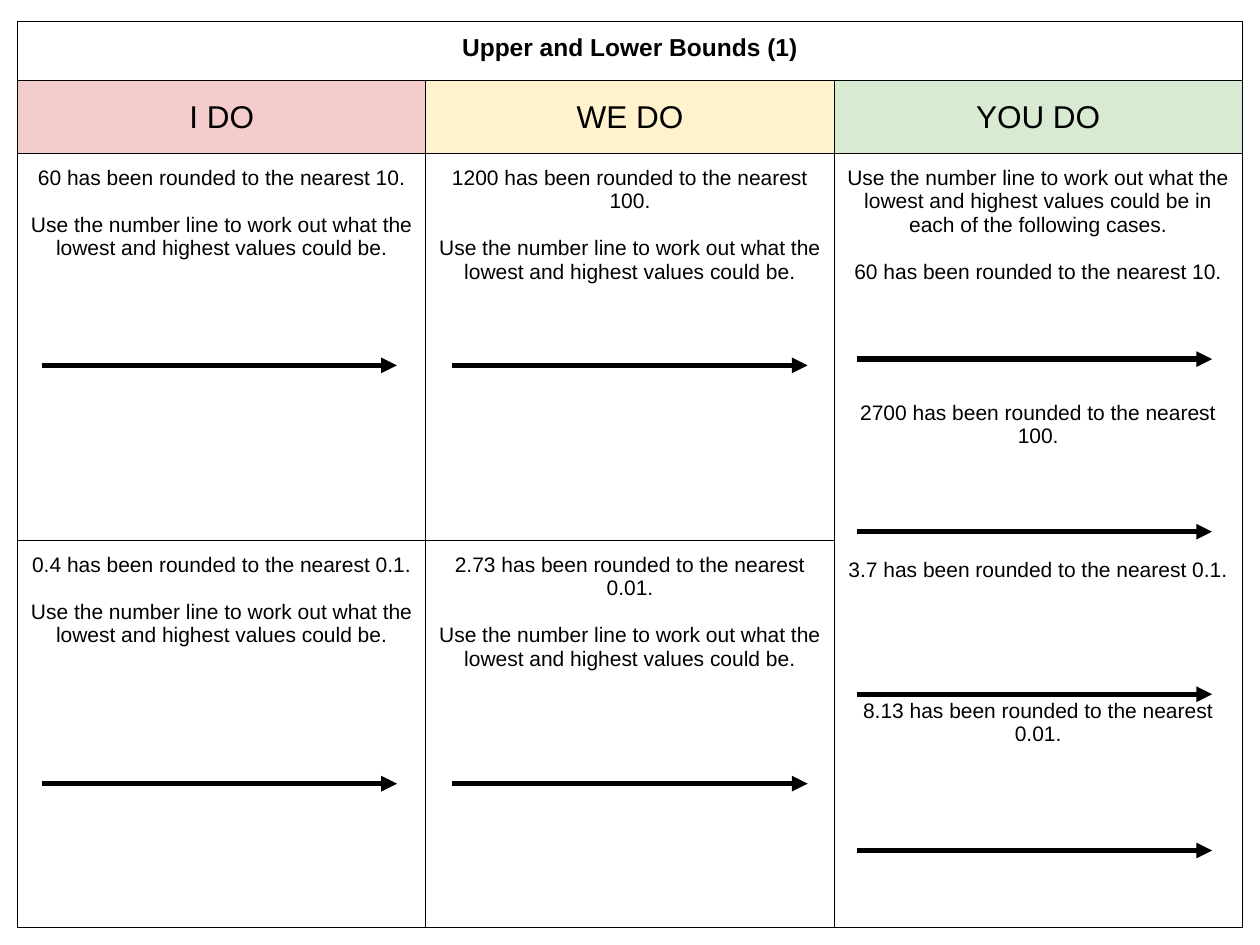
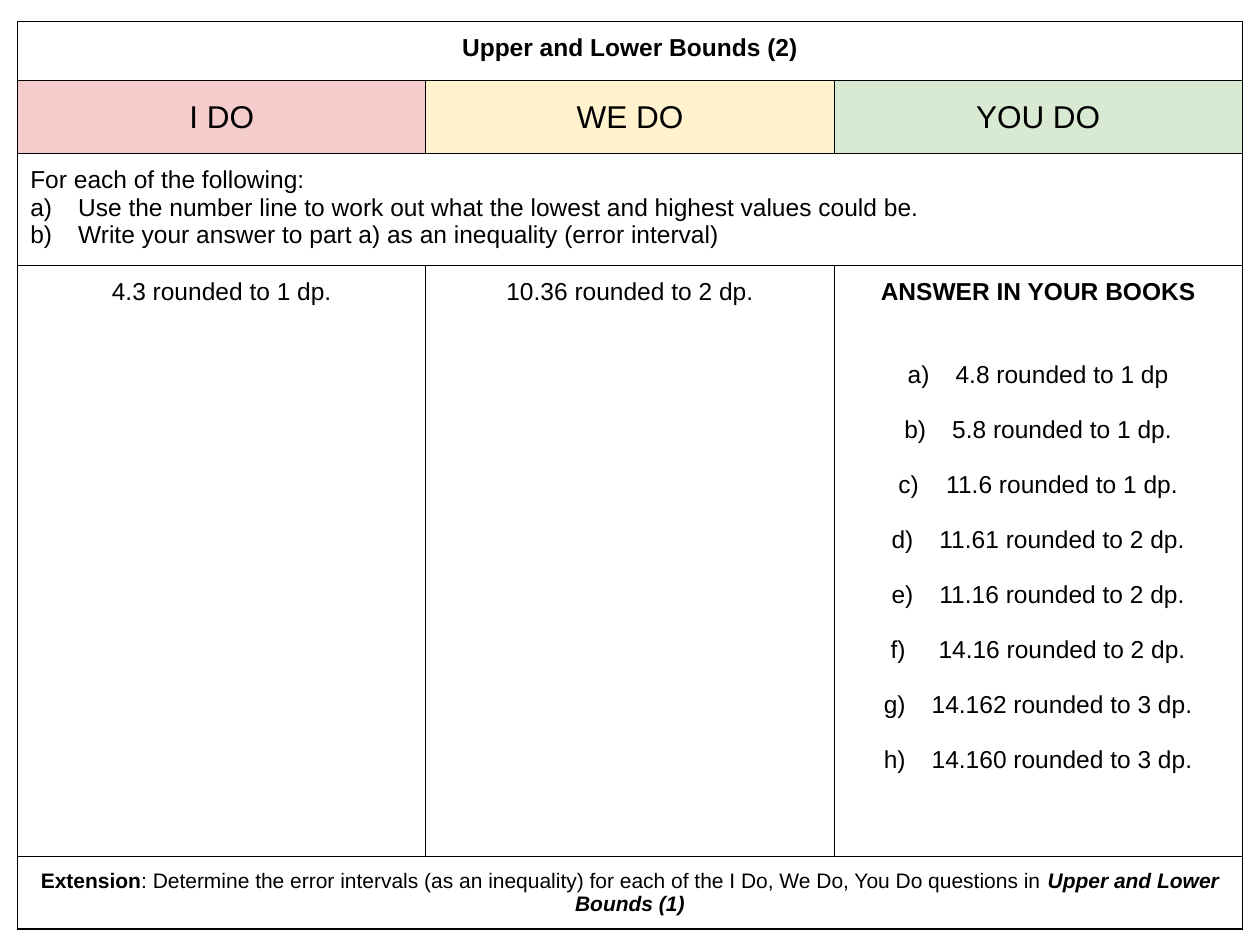
from lxml import etree
from pptx import Presentation
from pptx import util as u
from pptx.dml.color import RGBColor
from pptx.enum import shapes, text
from pptx.oxml import ns

FONT = "Arial"
BLACK = "000000"
HEADERS = [("I DO", "F4CCCC"), ("WE DO", "FFF2CC"), ("YOU DO", "D9EAD3")]
LEFT, TOP = 0.14, 0.17
COLUMN_WIDTH = 3.24
TITLE_HEIGHT, HEADER_HEIGHT = 0.47, 0.58
MARGIN, INDENT = 0.1, 0.38
ARROW_LENGTH = 2.82

TASK = "Use the number line to work out what the lowest and highest values could be"
LINE_12, LINE_14 = 13.4, 15.7  # height of one text line in points


def rounded(value, unit):
    return f"{value} has been rounded to the nearest {unit}."


def example(value, unit):
    return [dict(runs=rounded(value, unit)), dict(runs=TASK + ".", before=LINE_12)]


# Cells: (row, column, last row, last column, text size, paragraphs)
BOUNDS_1 = dict(
    title="Upper and Lower Bounds (1)",
    rows=[3.07, 3.07],
    cells=[
        (2, 0, 2, 0, 12, example("60", "10")),
        (2, 1, 2, 1, 12, example("1200", "100")),
        (2, 2, 3, 2, 12, [
            dict(runs=TASK + " in each of the following cases."),
            dict(runs=rounded("60", "10"), before=LINE_12),
            dict(runs=rounded("2700", "100"), before=5 * LINE_12),
            dict(runs=rounded("3.7", "0.1"), before=63),
            dict(runs=rounded("8.13", "0.01"), before=5 * LINE_12),
        ]),
        (3, 0, 3, 0, 12, example("0.4", "0.1")),
        (3, 1, 3, 1, 12, example("2.73", "0.01")),
    ],
    arrows=[(0.33, [2.9, 6.22]), (3.59, [2.9, 6.22]), (6.8, [2.85, 4.22, 5.51, 6.75])],
)

QUESTIONS = [
    "4.8 rounded to 1 dp", "5.8 rounded to 1 dp.", "11.6 rounded to 1 dp.",
    "11.61 rounded to 2 dp.", "11.16 rounded to 2 dp.", "14.16 rounded to 2 dp.",
    "14.162 rounded to 3 dp.", "14.160 rounded to 3 dp.",
]

BOUNDS_2 = dict(
    title="Upper and Lower Bounds (2)",
    rows=[0.89, 4.69, 0.57],
    cells=[
        (2, 0, 2, 2, 14, [
            dict(runs="For each of the following:", centred=False),
            dict(runs=TASK + ".", centred=False, lettered=True),
            dict(runs="Write your answer to part a) as an inequality (error interval)",
                 centred=False, lettered=True),
        ]),
        (3, 0, 3, 0, 14, [dict(runs="4.3 rounded to 1 dp.")]),
        (3, 1, 3, 1, 14, [dict(runs="10.36 rounded to 2 dp.")]),
        (3, 2, 3, 2, 14, [dict(runs=[("ANSWER IN YOUR BOOKS", "b")])] + [
            dict(runs=question, lettered=True, spacing=2, before=0 if number else LINE_14)
            for number, question in enumerate(QUESTIONS)
        ]),
        (4, 0, 4, 2, 12, [dict(runs=[
            ("Extension", "b"),
            (": Determine the error intervals (as an inequality) for each of the "
             "I Do, We Do, You Do questions in ", ""),
            ("Upper and Lower Bounds (1)", "bi"),
        ])]),
    ],
    arrows=[],
)


def colour(value):
    return RGBColor.from_string(value)


def add_xml(parent, tag, **attributes):
    return etree.SubElement(parent, ns.qn(tag), attributes)


def write_paragraph(paragraph, size, runs, centred=True, before=0, spacing=1, lettered=False):
    """Runs are plain text, or pairs of text and style letters (b, i)."""
    paragraph.alignment = text.PP_ALIGN.CENTER if centred else text.PP_ALIGN.LEFT
    paragraph.space_before = u.Pt(before)
    paragraph.line_spacing = float(spacing)
    if lettered:
        properties = paragraph._p.get_or_add_pPr()
        properties.set("marL", str(u.Inches(INDENT)))
        properties.set("indent", str(-u.Inches(INDENT)))
        add_xml(properties, "a:buFont", typeface=FONT)
        add_xml(properties, "a:buAutoNum", type="alphaLcParenR")
    for words, style in [(runs, "")] if isinstance(runs, str) else runs:
        run = paragraph.add_run()
        run.text = words
        run.font.name, run.font.size = FONT, u.Pt(size)
        run.font.bold, run.font.italic = "b" in style, "i" in style
        run.font.color.rgb = colour(BLACK)


def write_cell(cell, size, paragraphs):
    frame = cell.text_frame
    for number, paragraph in enumerate(paragraphs):
        target = frame.add_paragraph() if number else frame.paragraphs[0]
        write_paragraph(target, size, **paragraph)


def format_cell(cell):
    """Clear the fill, set the margins and draw a thin border on all sides."""
    cell.margin_left = cell.margin_right = u.Inches(MARGIN)
    cell.margin_top = cell.margin_bottom = u.Inches(MARGIN)
    properties = cell._tc.get_or_add_tcPr()
    for side in ("L", "R", "T", "B"):
        line = add_xml(properties, f"a:ln{side}", w=str(u.Pt(0.75)))
        add_xml(add_xml(line, "a:solidFill"), "a:srgbClr", val=BLACK)
    cell.fill.background()


def add_lesson_table(slide, title, rows, cells):
    heights = [TITLE_HEIGHT, HEADER_HEIGHT, *rows]
    frame = slide.shapes.add_table(
        len(heights), len(HEADERS), u.Inches(LEFT), u.Inches(TOP),
        u.Inches(COLUMN_WIDTH * len(HEADERS)), u.Inches(sum(heights)))
    table = frame.table
    table.first_row = table.horz_banding = False
    for row, height in zip(table.rows, heights):
        row.height = u.Inches(height)
    for column in table.columns:
        column.width = u.Inches(COLUMN_WIDTH)
    for cell in table.iter_cells():
        format_cell(cell)

    title_cell = (0, 0, 0, 2, 14, [dict(runs=[(title, "b")])])
    header_cells = [(1, column, 1, column, 18, [dict(runs=label)])
                    for column, (label, _) in enumerate(HEADERS)]
    for row, column, last_row, last_column, size, paragraphs in [title_cell, *header_cells, *cells]:
        cell = table.cell(row, column)
        if (row, column) != (last_row, last_column):
            cell.merge(table.cell(last_row, last_column))
        write_cell(cell, size, paragraphs)
    for column, (_, fill) in enumerate(HEADERS):
        cell = table.cell(1, column)
        cell.vertical_anchor = text.MSO_ANCHOR.MIDDLE
        cell.fill.solid()
        cell.fill.fore_color.rgb = colour(fill)


def add_number_line(slide, left, top):
    arrow = slide.shapes.add_connector(
        shapes.MSO_CONNECTOR.STRAIGHT, u.Inches(left), u.Inches(top),
        u.Inches(left + ARROW_LENGTH), u.Inches(top))
    arrow.line.width = u.Pt(3)
    arrow.line.color.rgb = colour(BLACK)
    add_xml(arrow.line._get_or_add_ln(), "a:tailEnd", type="triangle")
    add_xml(arrow._element.spPr, "a:effectLst")


def main():
    presentation = Presentation()
    presentation.slide_width, presentation.slide_height = u.Inches(10), u.Inches(7.5)
    for lesson in (BOUNDS_1, BOUNDS_2):
        slide = presentation.slides.add_slide(presentation.slide_layouts[6])
        add_lesson_table(slide, lesson["title"], lesson["rows"], lesson["cells"])
        for left, tops in lesson["arrows"]:
            for top in tops:
                add_number_line(slide, left, top)
    presentation.save("out.pptx")


if __name__ == "__main__":
    main()
